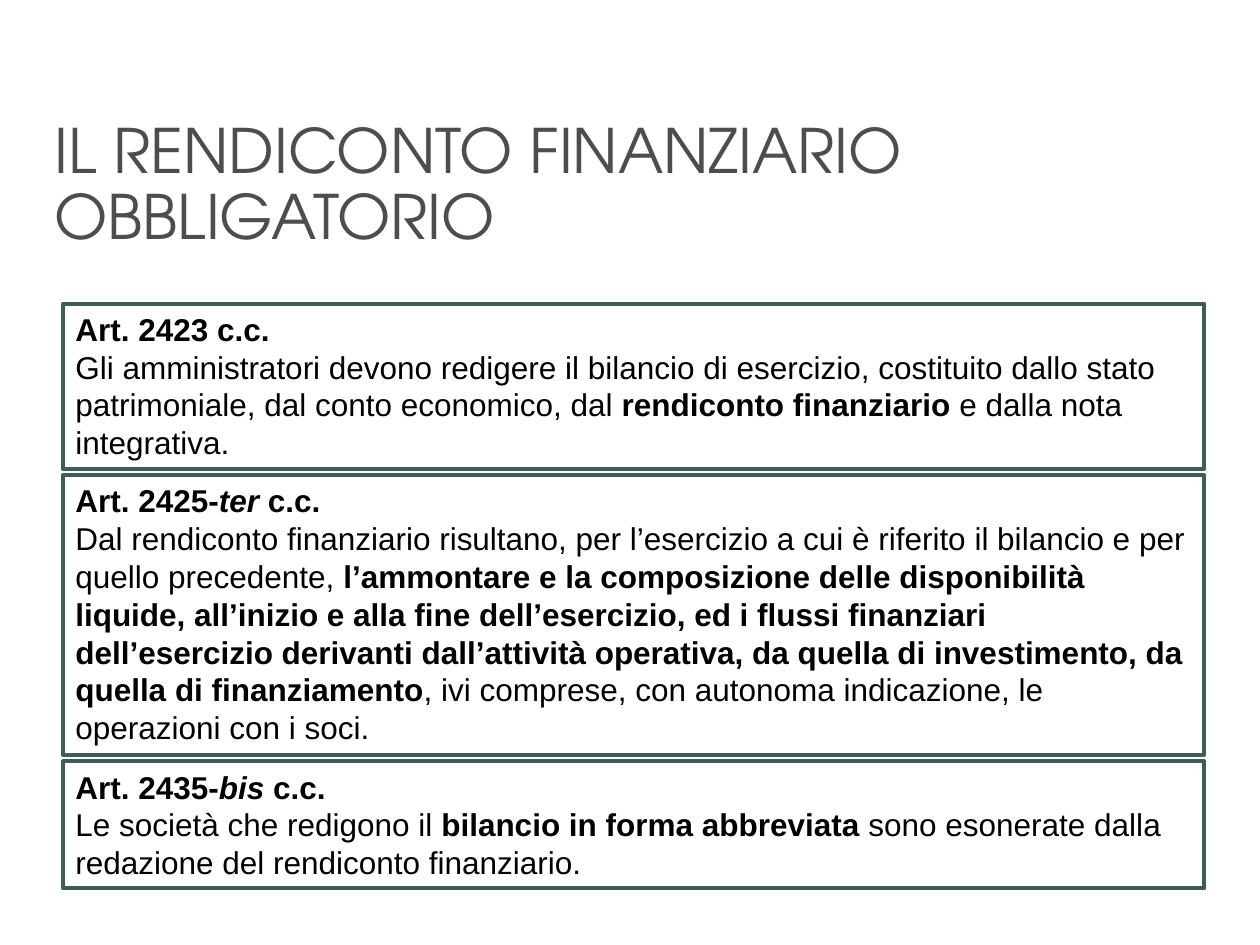
from pptx import Presentation
from pptx.dml.color import RGBColor
from pptx.enum.shapes import MSO_SHAPE
from pptx.enum.text import MSO_ANCHOR, MSO_AUTO_SIZE, PP_ALIGN
from pptx.util import Cm, Pt

HEADING = "IL RENDICONTO FINANZIARIO OBBLIGATORIO"
ARTICLES = [
    {"lines": 4, "paragraphs": [
        [("Art. 2423 c.c.", "b")],
        [("Gli amministratori devono redigere il bilancio di esercizio, costituito "
          "dallo stato patrimoniale, dal conto economico, dal ", ""),
         ("rendiconto finanziario ", "b"),
         ("e dalla nota integrativa.", "")],
    ]},
    {"lines": 7, "paragraphs": [
        [("Art. 2425-", "b"), ("ter", "bi"), (" c.c.", "b")],
        [("Dal rendiconto finanziario risultano, per l’esercizio a cui è riferito "
          "il bilancio e per quello precedente, ", ""),
         ("l’ammontare e la composizione delle disponibilità liquide, all’inizio e "
          "alla fine dell’esercizio, ed i flussi finanziari dell’esercizio derivanti "
          "dall’attività operativa, da quella di investimento, da quella di "
          "finanziamento", "b"),
         (", ivi comprese, con autonoma indicazione, le operazioni con i soci.", "")],
    ]},
    {"lines": 3, "paragraphs": [
        [("Art. 2435-", "b"), ("bis", "bi"), (" c.c.", "b")],
        [("Le società che redigono il ", ""),
         ("bilancio in forma abbreviata", "b"),
         (" sono esonerate dalla redazione del rendiconto finanziario.", "")],
    ]},
]
THEME = {
    "heading_font": "TeX Gyre Adventor", "heading_size": Pt(35),
    "heading_color": RGBColor.from_string("4D4D4D"),
    "body_font": "Arial", "body_size": Pt(18),
    "body_color": RGBColor.from_string("000000"),
    "border_color": RGBColor.from_string("405C58"), "border_width": Pt(2.25),
}
LEFT, TOP, WIDTH = Cm(1.27), Cm(6.12), Cm(23.01)
LINE_HEIGHT, PADDING, GAP = Cm(0.77), Cm(0.25), Cm(0.13)


def add_run(paragraph, text, role, style=""):
    run = paragraph.add_run()
    run.text = text
    run.font.name = THEME[f"{role}_font"]
    run.font.size = THEME[f"{role}_size"]
    run.font.color.rgb = THEME[f"{role}_color"]
    run.font.bold = "b" in style
    run.font.italic = "i" in style


def add_heading(slide):
    heading = slide.shapes.title
    heading.left, heading.top = Cm(0.84), Cm(2.31)
    heading.width, heading.height = Cm(23.93), Cm(4.57)
    frame = heading.text_frame
    frame.word_wrap = True
    frame.auto_size = MSO_AUTO_SIZE.NONE
    frame.vertical_anchor = MSO_ANCHOR.TOP
    paragraph = frame.paragraphs[0]
    paragraph.alignment = PP_ALIGN.LEFT
    paragraph.line_spacing = 0.9
    paragraph.space_before = Pt(0)
    add_run(paragraph, HEADING, "heading")


def add_article(slide, article, top, height):
    box = slide.shapes.add_shape(MSO_SHAPE.RECTANGLE, LEFT, top, WIDTH, height)
    box.shadow.inherit = False
    box.fill.background()
    box.line.color.rgb = THEME["border_color"]
    box.line.width = THEME["border_width"]
    frame = box.text_frame
    frame.word_wrap = True
    frame.auto_size = MSO_AUTO_SIZE.SHAPE_TO_FIT_TEXT
    frame.vertical_anchor = MSO_ANCHOR.TOP
    for index, runs in enumerate(article["paragraphs"]):
        paragraph = frame.add_paragraph() if index else frame.paragraphs[0]
        paragraph.alignment = PP_ALIGN.LEFT
        for text, style in runs:
            add_run(paragraph, text, "body", style)


def main():
    deck = Presentation()
    deck.slide_width, deck.slide_height = Cm(25.4), Cm(19.05)
    slide = deck.slides.add_slide(deck.slide_layouts[5])
    add_heading(slide)
    top = TOP
    for article in ARTICLES:
        height = PADDING + article["lines"] * LINE_HEIGHT
        add_article(slide, article, top, height)
        top += height + GAP
    deck.save("out.pptx")


if __name__ == "__main__":
    main()
